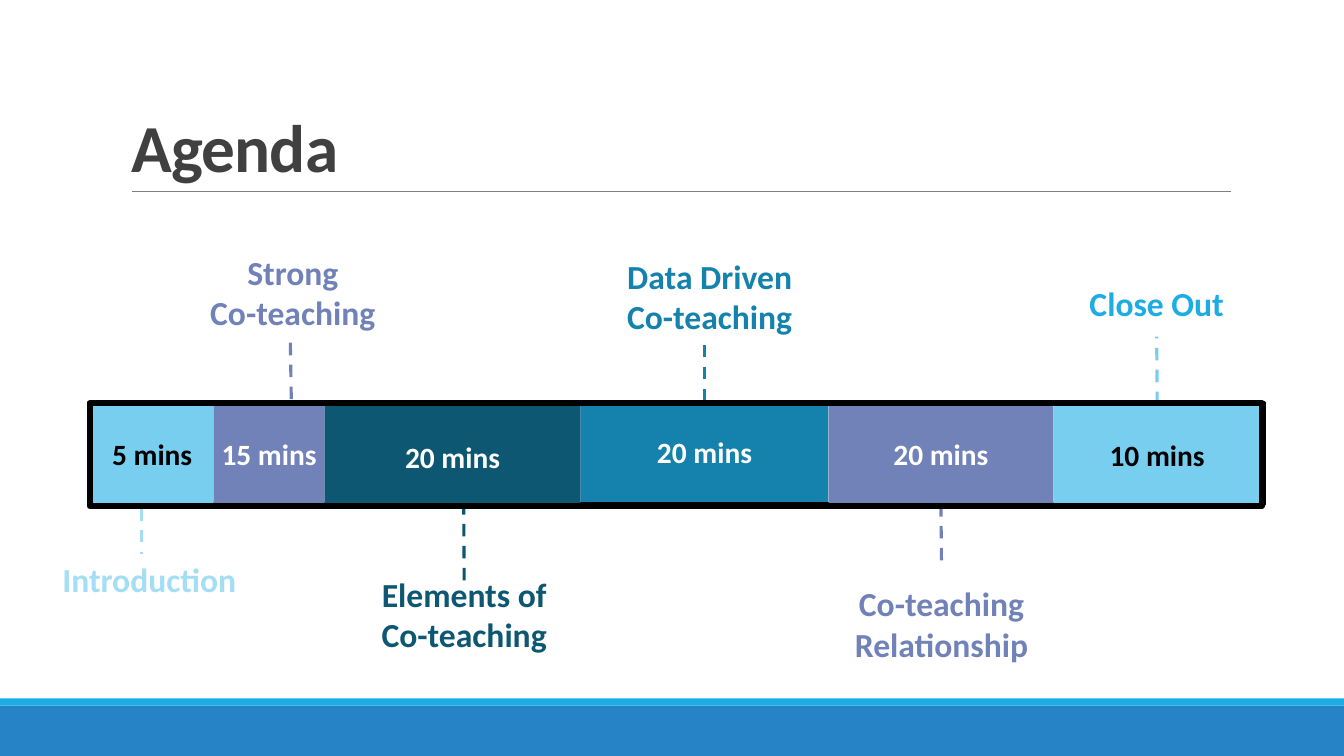
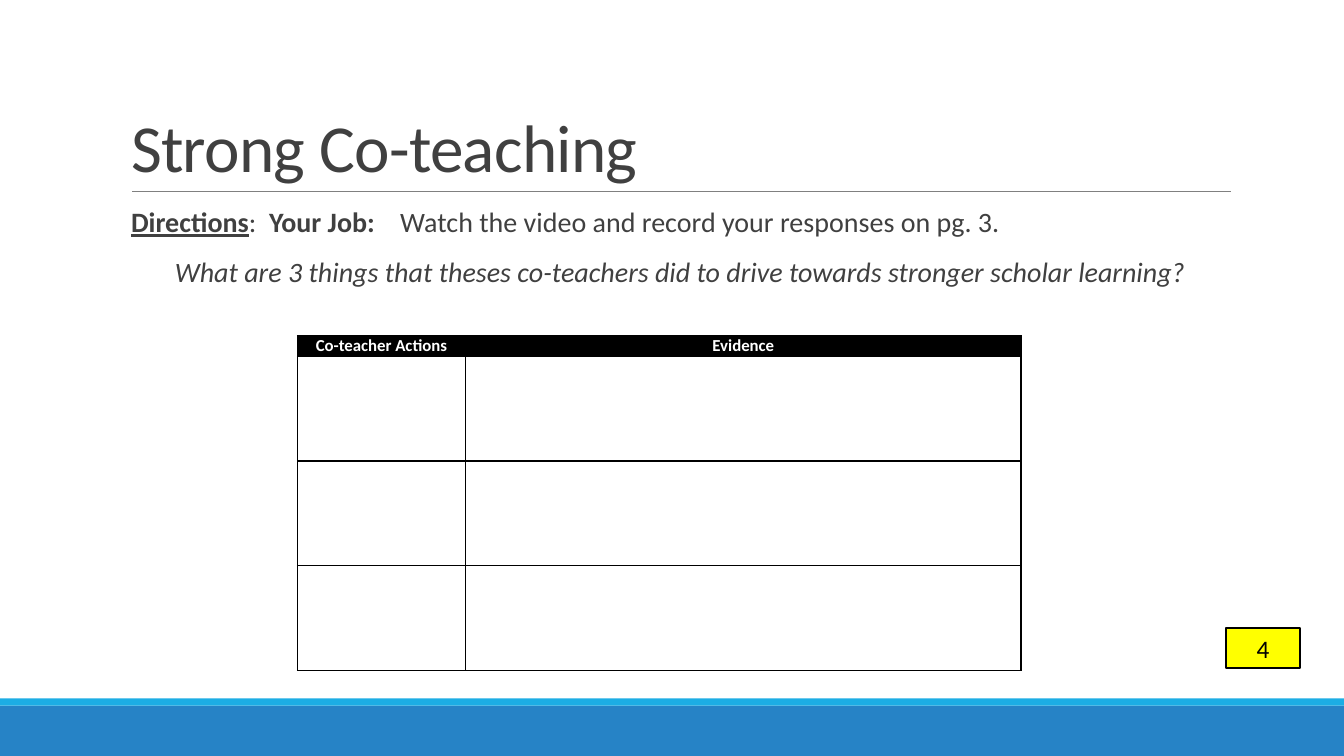
from dataclasses import dataclass
from itertools import accumulate
from typing import NamedTuple

from lxml import etree
from pptx import Presentation
from pptx import util as u
from pptx.dml.color import RGBColor
from pptx.enum import dml, shapes, text
from pptx.oxml import ns

CELL = 0.1  # the grid has square cells, a tenth of an inch wide
COLUMNS, ROWS = 133.33, 75

FONT = "Calibri"
BLACK, WHITE, GREY, INK = "000000", "FFFFFF", "808080", "404040"
BLUE, CYAN, YELLOW = "2683C6", "1CADE4", "FFFF00"
PALE, SKY, VIOLET, TEAL, DEEP = "A4DEF4", "77CEEF", "7182B8", "1482AC", "0E5772"
CENTER, LEFT = text.PP_ALIGN.CENTER, text.PP_ALIGN.LEFT


class Box(NamedTuple):
    """Left, top, width and height in grid cells."""
    x: float
    y: float
    w: float
    h: float

    def lengths(self) -> list[int]:
        return [cells(value) for value in self]


class Phrase(NamedTuple):
    """A run of the directions; tracking is extra letter spacing in points."""
    words: str
    bold: bool = False
    underline: bool = False
    tracking: float = 0


@dataclass
class Topic:
    """One stretch of the agenda bar with its label and dashed stem."""
    minutes: str
    width: float
    top: float
    fill: str
    stem: tuple[float, float, float, float]
    stem_color: str
    label: list[str]
    label_box: Box
    label_color: str
    minutes_color: str = WHITE
    label_align: text.PP_ALIGN = CENTER


TITLE_BOX = Box(12, 3.1, 110, 15.9)
BODY_BOX = Box(12, 20.2, 110, 15.9)
BAR_LEFT, BAR_HEIGHT = 9, 10
BACK_FRAME, FRONT_FRAME = Box(8.8, 40, 116.6, 10), Box(8.9, 40, 116.3, 10.2)

TOPICS = [
    Topic("5 mins", 12.2, 40, SKY, (14, 50.4, 14, 55), PALE,
          ["Introduction"], Box(5.2, 54.1, 19.8, 6.7), PALE, BLACK, LEFT),
    Topic("15 mins", 11, 40, VIOLET, (28.9, 39.6, 28.8, 33.9), VIOLET,
          ["Strong", "Co-teaching"], Box(18.4, 22.9, 21.3, 12.1), VIOLET),
    Topic("20 mins", 25.4, 40.3, DEEP, (46, 49.8, 46, 57.6), DEEP,
          ["Elements of Co-teaching"], Box(34.8, 57.6, 22.5, 6.7), DEEP),
    Topic("20 mins", 24.6, 39.8, TEAL, (69.9, 39.8, 69.9, 34.2), TEAL,
          ["Data Driven Co-teaching"], Box(60, 26, 20.8, 6.7), TEAL),
    Topic("20 mins", 22.3, 40, VIOLET, (93.3, 50, 93.3, 55.8), VIOLET,
          ["Co-teaching Relationship"], Box(78.5, 55.8, 29.8, 12.1), VIOLET),
    Topic("10 mins", 20.6, 40.1, SKY, (114.8, 40.1, 114.8, 33.4), SKY,
          ["Close Out"], Box(106, 26.7, 17.5, 6.7), CYAN, BLACK),
]

JOB = [
    Phrase("Directions", bold=True, underline=True),
    Phrase(":"),
    Phrase(" ", tracking=4.5),
    Phrase("Your Job:", bold=True),
    Phrase(" ", tracking=13.5),
    Phrase("Watch the video and record your responses on pg. 3."),
]
QUESTION = ("What are 3 things that theses co-teachers did "
            "to drive towards stronger scholar learning?")


def cells(count: float) -> int:
    return u.Inches(count * CELL)


def rgb(value: str) -> RGBColor:
    return RGBColor.from_string(value)


def style(paragraph, size: float, color: str, bold=None, align=CENTER) -> None:
    paragraph.alignment = align
    font = paragraph.font
    font.name, font.size, font.bold = FONT, u.Pt(size), bold
    font.color.rgb = rgb(color)


def track(run, points: float) -> None:
    """Set a run's letter spacing."""
    run.font._element.set("spc", str(round(points * 100)))


def write(frame, lines: list[str], size: float, color: str, bold=None, align=CENTER) -> None:
    frame.text = "\n".join(lines)
    frame.word_wrap = True
    frame.vertical_anchor = text.MSO_ANCHOR.MIDDLE
    for paragraph in frame.paragraphs:
        style(paragraph, size, color, bold, align)


def rectangle(slide, box: Box, fill: str | None = None,
              line: str | None = None, weight: float = 1):
    shape = slide.shapes.add_shape(shapes.MSO_SHAPE.RECTANGLE, *box.lengths())
    shape.shadow.inherit = False
    if fill:
        shape.fill.solid()
        shape.fill.fore_color.rgb = rgb(fill)
    else:
        shape.fill.background()
    if line:
        shape.line.color.rgb = rgb(line)
        shape.line.width = u.Pt(weight)
    else:
        shape.line.fill.background()
    return shape


def straight_line(slide, ends: tuple[float, float, float, float], color: str, weight: float):
    line = slide.shapes.add_connector(
        shapes.MSO_CONNECTOR.STRAIGHT, *(cells(end) for end in ends))
    line.line.color.rgb = rgb(color)
    line.line.width = u.Pt(weight)
    etree.SubElement(line.element.spPr, ns.qn("a:effectLst"))
    return line


def is_side_middle(x: float, y: float, box: Box, side: int) -> bool:
    """Whether a point meets the middle of a box's top (0) or bottom (2)."""
    edge = box.y if side == 0 else box.y + box.h
    return abs(x - box.x - box.w / 2) < 0.5 and abs(y - edge) < 0.5


def add_frame_to_master(slide, master) -> None:
    """Give every slide the two bottom bands and the rule under the title."""
    parts = [
        rectangle(slide, Box(0, 70, COLUMNS, 5), BLUE),
        rectangle(slide, Box(0, 69.3, COLUMNS, 0.7), CYAN),
        straight_line(slide, (13.1, 19, 122.1, 19), GREY, 0.5),
    ]
    for number, part in enumerate(parts, 100):
        part.element.xpath(".//p:cNvPr")[0].set("id", str(number))
        master.shapes.element.append(part.element)


def place(placeholder, box: Box):
    placeholder.left, placeholder.top, placeholder.width, placeholder.height = box.lengths()
    frame = placeholder.text_frame
    frame.auto_size = text.MSO_AUTO_SIZE.NONE
    frame.word_wrap = True
    return frame


def set_title(slide, words: str, bold: bool) -> None:
    frame = place(slide.shapes.title, TITLE_BOX)
    frame.text = words
    frame.vertical_anchor = text.MSO_ANCHOR.BOTTOM
    heading = frame.paragraphs[0]
    heading.line_spacing = 0.85
    style(heading, 48, INK, bold, LEFT)
    track(heading.runs[0], -0.5)


def add_topic(slide, topic: Topic, left: float) -> None:
    segment_box = Box(left, topic.top, topic.width, BAR_HEIGHT)
    segment = rectangle(slide, segment_box, topic.fill)
    frame = segment.text_frame
    write(frame, [topic.minutes], 21, topic.minutes_color, True)
    frame.margin_left = frame.margin_right = 0

    label = slide.shapes.add_textbox(*topic.label_box.lengths())
    write(label.text_frame, topic.label, 24, topic.label_color, True, topic.label_align)

    stem = straight_line(slide, topic.stem, topic.stem_color, 2.25)
    stem.line.dash_style = dml.MSO_LINE.DASH
    x1, y1, x2, y2 = topic.stem
    from_side, to_side = (0, 2) if y2 < y1 else (2, 0)
    if is_side_middle(x1, y1, segment_box, from_side):
        stem.begin_connect(segment, from_side)
    if is_side_middle(x2, y2, topic.label_box, to_side):
        stem.end_connect(label, to_side)


def build_agenda(slide) -> None:
    set_title(slide, "Agenda", True)
    rectangle(slide, BACK_FRAME, line=BLACK, weight=3)
    lefts = accumulate((topic.width for topic in TOPICS), initial=BAR_LEFT)
    for topic, left in zip(TOPICS, lefts):
        add_topic(slide, topic, left)
    rectangle(slide, FRONT_FRAME, line=BLACK, weight=4.5)


def format_direction(paragraph, align: text.PP_ALIGN) -> None:
    """Set an unbulleted body line."""
    props = paragraph._p.get_or_add_pPr()
    props.set("marL", str(cells(1)))
    props.set("indent", "0")
    etree.SubElement(props, ns.qn("a:buNone"))
    paragraph.line_spacing = 0.9
    paragraph.space_before, paragraph.space_after = u.Pt(12), u.Pt(2)
    style(paragraph, 20, INK, align=align)


def add_directions(slide) -> None:
    frame = place(slide.placeholders[1], BODY_BOX)
    frame.margin_left = frame.margin_right = 0
    job = frame.paragraphs[0]
    format_direction(job, LEFT)
    for phrase in JOB:
        run = job.add_run()
        run.text = phrase.words
        run.font.bold, run.font.underline = phrase.bold, phrase.underline
        if phrase.tracking:
            track(run, phrase.tracking)
    question = frame.add_paragraph()
    question.text = QUESTION
    format_direction(question, CENTER)
    question.font.italic = True


def format_cell(cell, fill: str) -> None:
    cell.fill.solid()
    cell.fill.fore_color.rgb = rgb(fill)
    props = cell._tc.get_or_add_tcPr()
    for position, side in enumerate(("lnL", "lnR", "lnT", "lnB")):
        border = etree.Element(ns.qn(f"a:{side}"), w=str(u.Pt(1)))
        solid = etree.SubElement(border, ns.qn("a:solidFill"))
        etree.SubElement(solid, ns.qn("a:srgbClr"), val=BLACK)
        props.insert(position, border)


def add_evidence_table(slide) -> None:
    headings, widths = ("Co-teacher Actions", "Evidence"), (16.7, 55.1)
    heights = (1.9, 10.4, 10.4, 10.4)
    box = Box(29.5, 33.3, sum(widths), sum(heights))
    table = slide.shapes.add_table(len(heights), len(widths), *box.lengths()).table
    for column, width in zip(table.columns, widths):
        column.width = cells(width)
    for index, (row, height) in enumerate(zip(table.rows, heights)):
        row.height = cells(height)
        for cell in row.cells:
            format_cell(cell, WHITE if index else BLACK)
    for cell, heading in zip(table.rows[0].cells, headings):
        cell.text = heading
        cell.margin_left = cell.margin_right = cells(0.7)
        cell.margin_top = cell.margin_bottom = 0
        style(cell.text_frame.paragraphs[0], 12, WHITE, True)


def build_directions(slide) -> None:
    set_title(slide, "Strong Co-teaching", False)
    add_directions(slide)
    page_mark = rectangle(slide, Box(121.6, 62.3, 7.4, 4), YELLOW, BLACK, 1.25)
    write(page_mark.text_frame, ["4"], 18, BLACK)
    add_evidence_table(slide)


def main() -> None:
    deck = Presentation()
    deck.slide_width, deck.slide_height = cells(COLUMNS), cells(ROWS)
    title_only, title_and_content = deck.slide_layouts[5], deck.slide_layouts[1]
    agenda = deck.slides.add_slide(title_only)
    add_frame_to_master(agenda, deck.slide_master)
    build_agenda(agenda)
    build_directions(deck.slides.add_slide(title_and_content))
    deck.save("out.pptx")


if __name__ == "__main__":
    main()
